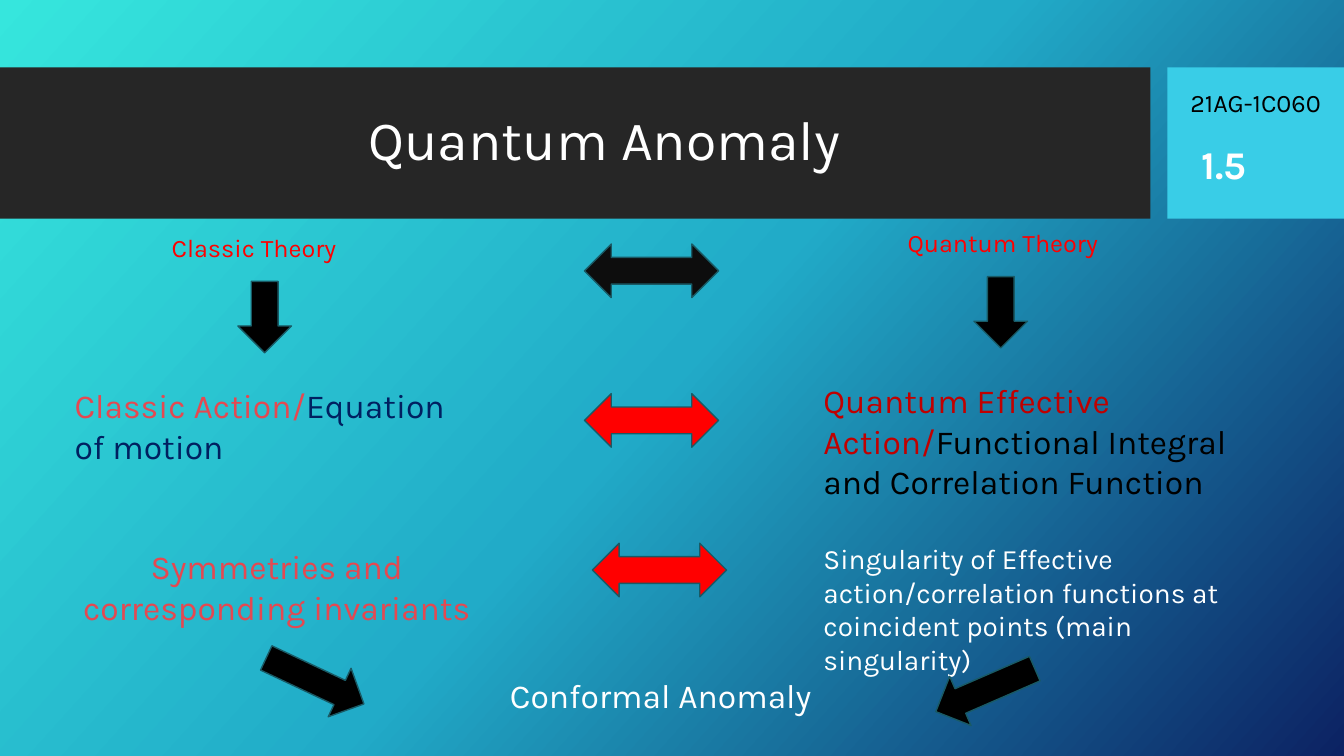
"""Builds the Quantum Anomaly slide."""
from copy import deepcopy

from pptx import Presentation
from pptx import util as u
from pptx.dml.color import RGBColor
from pptx.enum import shapes, text

TURQUOISE = RGBColor(0x36, 0xE6, 0xDD)
TEAL = RGBColor(0x21, 0xAB, 0xC8)
NAVY = RGBColor(0x0C, 0x22, 0x63)
CHARCOAL = RGBColor(0x26, 0x26, 0x26)
CYAN = RGBColor(0x39, 0xCD, 0xE7)
OUTLINE = RGBColor(0x19, 0x5A, 0x65)
INK = RGBColor(0x0D, 0x0D, 0x0D)
BLACK = RGBColor(0, 0, 0)
WHITE = RGBColor(0xFF, 0xFF, 0xFF)
RED = RGBColor(0xFF, 0, 0)
DARK_RED = RGBColor(0xC0, 0, 0)
CORAL = RGBColor(0xE4, 0x49, 0x51)
DEEP_BLUE = RGBColor(0x00, 0x20, 0x60)

LEFT, CENTER = text.PP_ALIGN.LEFT, text.PP_ALIGN.CENTER
TOP, MIDDLE = text.MSO_ANCHOR.TOP, text.MSO_ANCHOR.MIDDLE
SHAPE = shapes.MSO_SHAPE


def cm(box):
    """Turn a box of centimetres into lengths."""
    return [u.Cm(side) for side in box]


def write(slide, box, runs, size, align=LEFT, anchor=TOP, bold=False):
    """Write one paragraph of (wording, colour) runs in a box."""
    frame = slide.shapes.add_textbox(*cm(box)).text_frame
    frame.word_wrap = True
    frame.vertical_anchor = anchor
    paragraph = frame.paragraphs[0]
    paragraph.alignment = align
    for wording, colour in runs:
        run = paragraph.add_run()
        run.text = wording
        style = {"name": "Karla", "size": u.Pt(size), "bold": bold}
        for key, value in style.items():
            setattr(run.font, key, value)
        run.font.color.rgb = colour


def draw(slide, kind, box, colour, outline=None, rotation=0):
    """Draw a flat preset shape."""
    figure = slide.shapes.add_shape(kind, *cm(box))
    figure.shadow.inherit = False
    figure.rotation = rotation
    figure.fill.solid()
    figure.fill.fore_color.rgb = colour
    if outline is None:
        figure.line.fill.background()
    else:
        figure.line.color.rgb = outline
        figure.line.width = u.Pt(1)


def draw_arrow(slide, center, length, rotation):
    """Draw a black arrow turned about its centre."""
    x, y = center
    thickness = 1.35
    box = (x - length / 2, y - thickness / 2, length, thickness)
    draw(slide, SHAPE.RIGHT_ARROW, box, BLACK, OUTLINE, rotation)


def paint_background(slide):
    """Fill the background with a diagonal gradient of three colours."""
    fill = slide.background.fill
    fill.gradient()
    fill.gradient_angle = 318
    first = slide.element.xpath(".//a:gsLst/a:gs")[0]
    first.addnext(deepcopy(first))
    for stop, position, colour in zip(fill.gradient_stops, (0, 0.5, 1), (TURQUOISE, TEAL, NAVY)):
        stop.position = position
        stop.color.rgb = colour


def add_header(slide, box):
    """Place the title band and the numbered tag beside it."""
    left, top, width, height = box
    tag_width, gap = 4.45, 0.43
    band_width = width - tag_width - gap
    tag_left = left + band_width + gap
    draw(slide, SHAPE.RECTANGLE, (left, top, band_width, height), CHARCOAL)
    draw(slide, SHAPE.RECTANGLE, (tag_left, top, tag_width, height), CYAN)
    write(slide, (left + 1.88, top + 0.28, 26.7, 3), [("Quantum Anomaly", WHITE)], 39.6, CENTER, MIDDLE)
    write(slide, (tag_left + 0.33, top + 0.38, 4.04, 1.02), [("21AG-1C060", BLACK)], 18)
    write(slide, (tag_left + 0.61, top + 1.7, 3.4, 1.45), [("1.5", WHITE)], 28, bold=True)


def add_theory(slide, box, theory):
    """Place a theory's name, statement and outcome with the arrows between."""
    left, top, width, height = box
    name_width = 10.5
    write(slide, (left + 4.77 - name_width / 2, top, name_width, 1.02), [(theory["name"], RED)], 18, CENTER)
    draw_arrow(slide, (left + theory["down_x"], top + 2.27), 1.8, 90)
    write(slide, (left, top + 3.86, width, 3.33), theory["statement"], 24)
    write(slide, (left, top + 7.92, width, 2.82), theory["outcome"], theory["outcome_size"], theory["outcome_align"])
    draw_arrow(slide, (left + theory["exit_x"], top + height), 2.72, theory["exit_angle"])


def add_links(slide, box):
    """Stack the double arrows that link the two theories."""
    left, top, width, height = box
    thickness = 1.35
    step = (height - thickness) / 2
    for row, (colour, shift) in enumerate([(INK, 0), (RED, 0), (RED, 0.2)]):
        link = (left + shift, top + row * step, width, thickness)
        draw(slide, SHAPE.LEFT_RIGHT_ARROW, link, colour, OUTLINE)


def main():
    """Build and save the slide."""
    deck = Presentation()
    deck.slide_width, deck.slide_height = u.Cm(33.87), u.Cm(19.05)
    slide = deck.slides.add_slide(deck.slide_layouts[6])
    classic = {
        "name": "Classic Theory",
        "down_x": 5.04,
        "statement": [("Classic Action/", CORAL), ("Equation of motion", DEEP_BLUE)],
        "outcome": [("Symmetries and corresponding invariants", CORAL)],
        "outcome_size": 24,
        "outcome_align": CENTER,
        "exit_x": 6.31,
        "exit_angle": 25.2,
    }
    quantum = {
        "name": "Quantum Theory",
        "down_x": 4.72,
        "statement": [
            ("Quantum Effective Action/", DARK_RED),
            ("Functional Integral and Correlation Function", BLACK),
        ],
        "outcome": [(
            "Singularity of Effective action/correlation functions "
            "at coincident points (main singularity)", WHITE)],
        "outcome_size": 20,
        "outcome_align": LEFT,
        "exit_x": 4.33,
        "exit_angle": 156.5,
    }
    paint_background(slide)
    add_header(slide, (0, 1.7, 33.87, 3.81))
    add_theory(slide, (1.63, 5.72, 10.69, 11.44), classic)
    add_links(slide, (14.73, 6.15, 3.38, 8.89))
    add_theory(slide, (20.5, 5.6, 11.96, 11.79), quantum)
    write(slide, (11.81, 16.89, 9.68, 1.28), [("Conformal Anomaly", WHITE)], 24, CENTER)
    deck.save("out.pptx")


if __name__ == "__main__":
    main()
